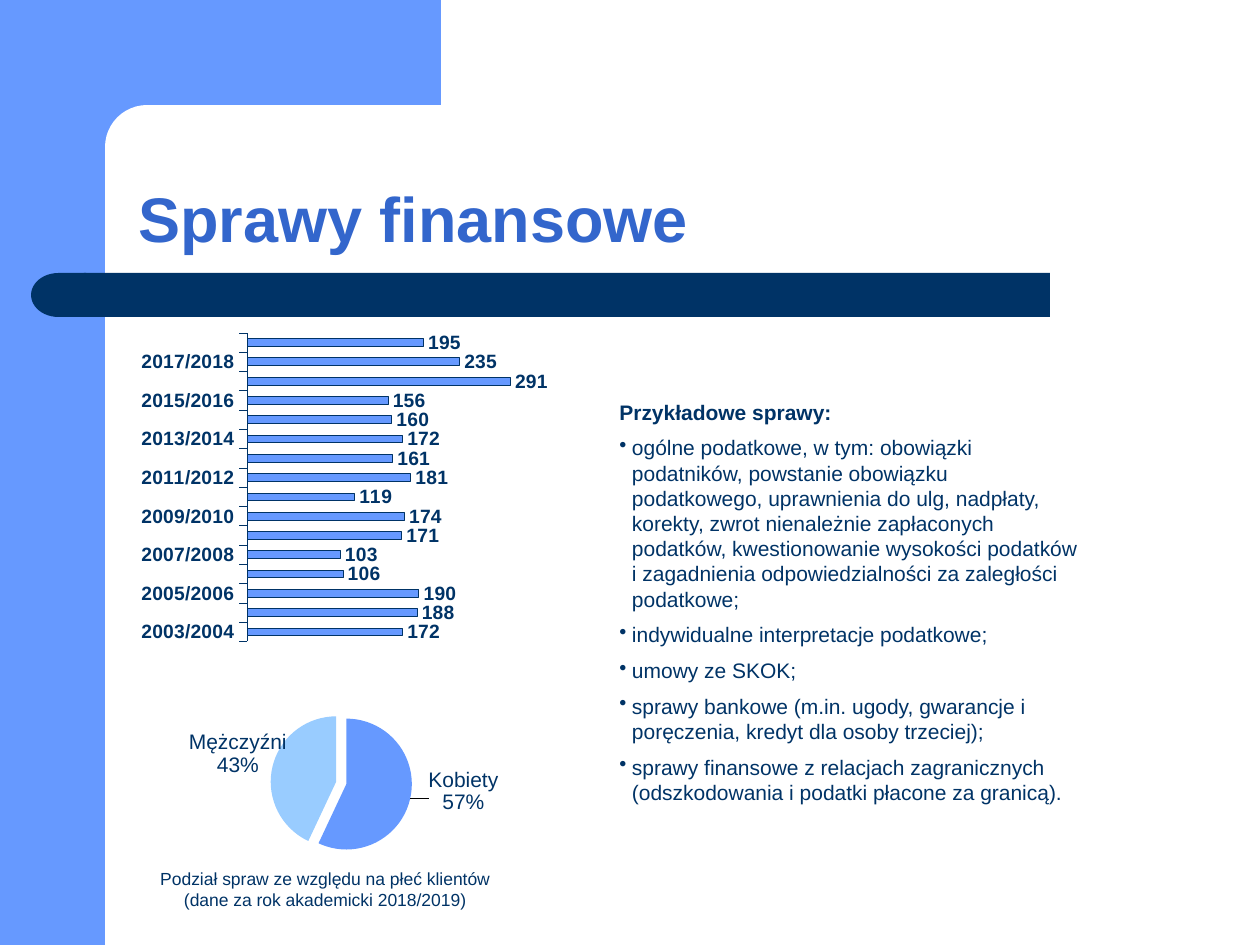
import pptx
import pptx.chart.data
import pptx.dml.color
import pptx.enum.chart
import pptx.enum.shapes
import pptx.enum.text
import pptx.oxml
import pptx.oxml.ns
import pptx.util

SCALE = 914400 // 126  # EMU per px
BLUE, LIGHT, NAVY, TITLE = "6699FF", "99CCFF", "003366", "3366CC"
SHAPES = pptx.enum.shapes.MSO_SHAPE
ALIGN = pptx.enum.text.PP_ALIGN
ANCHOR = pptx.enum.text.MSO_ANCHOR
CHARTS = pptx.enum.chart.XL_CHART_TYPE
LABELS = pptx.enum.chart.XL_LABEL_POSITION


def px(*lengths):
    return [pptx.util.Emu(length * SCALE) for length in lengths]


def color(value):
    return pptx.dml.color.RGBColor.from_string(value)


def manual_layout(inner=False, **values):
    """Manual chart layout; x, y, w, h are fractions of the chart."""
    parts = ['<c:layoutTarget val="inner"/>'] if inner else []
    if inner:
        parts += ['<c:xMode val="edge"/>', '<c:yMode val="edge"/>']
    parts += [f'<c:{name} val="{value}"/>' for name, value in values.items()]
    return pptx.oxml.parse_xml(
        f'<c:layout {pptx.oxml.ns.nsdecls("c")}><c:manualLayout>'
        f'{"".join(parts)}</c:manualLayout></c:layout>')


class SlideBuilder:
    font = "Arial"

    def __init__(self, slide):
        self.slide = slide

    def style(self, font, size, ink=NAVY, bold=False):
        font.name, font.size, font.bold = self.font, pptx.util.Pt(size), bold
        font.color.rgb = color(ink)

    def block(self, kind, box, fill, rounding=None, rotation=0):
        shape = self.slide.shapes.add_shape(kind, *px(*box))
        shape.shadow.inherit = False
        shape.fill.solid()
        shape.fill.fore_color.rgb = color(fill)
        shape.line.fill.background()
        shape.rotation = rotation
        if rounding is not None:
            shape.adjustments[0] = rounding

    def text(self, box, anchor=ANCHOR.TOP):
        frame = self.slide.shapes.add_textbox(*px(*box)).text_frame
        frame.word_wrap = True
        frame.vertical_anchor = anchor
        return frame

    def paragraph(self, frame, words, size, ink=NAVY, bold=False, before=0,
                  align=ALIGN.LEFT, bullet=False):
        paragraph = frame.paragraphs[0]
        if paragraph.runs:
            paragraph = frame.add_paragraph()
        paragraph.alignment = align
        paragraph.space_before = pptx.util.Pt(before)
        run = paragraph.add_run()
        run.text = words
        self.style(run.font, size, ink, bold)
        if bullet:
            properties = paragraph._p.get_or_add_pPr()
            properties.set("marL", "91440")
            properties.set("indent", "-91440")
            properties.append(pptx.oxml.parse_xml(
                f'<a:buChar {pptx.oxml.ns.nsdecls("a")} char="•"/>'))
        return paragraph

    def chart(self, kind, box, categories, values, plot, size, bold=False):
        data = pptx.chart.data.CategoryChartData()
        data.categories = categories
        data.add_series("Series 1", values)
        chart = self.slide.shapes.add_chart(kind, *px(*box), data).chart
        chart.has_title = chart.has_legend = False
        self.style(chart.font, size, bold=bold)
        area = chart._chartSpace.chart.plotArea
        for layout in area.findall(pptx.oxml.ns.qn("c:layout")):
            area.remove(layout)
        area.insert(0, manual_layout(inner=True, **plot))
        plot_object = chart.plots[0]
        plot_object.has_data_labels = True
        labels = plot_object.data_labels
        self.style(labels.font, size, bold=bold)
        labels.position = LABELS.OUTSIDE_END
        return chart

    def bars(self, box, categories, values, plot, maximum):
        chart = self.chart(CHARTS.BAR_CLUSTERED, box, categories, values,
                           plot, 11, bold=True)
        bar_plot = chart.plots[0]
        bar_plot.gap_width = 150
        bar_plot.vary_by_categories = False
        bar_plot.data_labels.show_value = True
        series = bar_plot.series[0]
        series.format.fill.solid()
        series.format.fill.fore_color.rgb = color(BLUE)
        axis = chart.category_axis
        axis.major_tick_mark = pptx.enum.chart.XL_TICK_MARK.OUTSIDE
        self.style(axis.tick_labels.font, 11, bold=True)
        for line, width in ((series.format.line, 0.25),
                            (axis.format.line, 0.15)):
            line.color.rgb = color(NAVY)
            line.width = pptx.util.Pt(width)
        scale = chart.value_axis
        scale.minimum_scale, scale.maximum_scale = 0, maximum
        scale.has_major_gridlines = False
        scale.visible = False

    def pie(self, box, categories, values, plot, fills, offsets):
        chart = self.chart(CHARTS.PIE_EXPLODED, box, categories, values,
                           plot, 12)
        pie_plot = chart.plots[0]
        series = pie_plot.series[0]
        explosion = series._element.find(pptx.oxml.ns.qn("c:explosion"))
        explosion.set("val", "8")
        for labels in (pie_plot.data_labels, series.data_labels):
            self.style(labels.font, 12)
            labels.show_percentage = labels.show_category_name = True
            labels.show_value = False
            labels.position = LABELS.OUTSIDE_END
        for index, (fill, (x, y)) in enumerate(zip(fills, offsets)):
            point = series.points[index]
            point.format.fill.solid()
            point.format.fill.fore_color.rgb = color(fill)
            point.data_label.position = LABELS.OUTSIDE_END
            label = series.data_labels._element.dLbl_lst[index]
            label.insert(1, manual_layout(x=x, y=y))
            for name, shown in (("showVal", 0), ("showCatName", 1),
                                ("showPercent", 1)):
                label.find(pptx.oxml.ns.qn(f"c:{name}")).set("val", str(shown))
            separator = pptx.oxml.parse_xml(
                f'<c:separator {pptx.oxml.ns.nsdecls("c")}>\n</c:separator>')
            label.append(separator)


def main():
    presentation = pptx.Presentation()
    presentation.slide_width, presentation.slide_height = px(1260, 945)
    builder = SlideBuilder(
        presentation.slides.add_slide(presentation.slide_layouts[6]))

    # Frame and title bar
    builder.block(SHAPES.RECTANGLE, (0, 0, 105, 945), BLUE)
    builder.block(SHAPES.RECTANGLE, (94, 0, 347, 147), BLUE)
    builder.block(SHAPES.ROUNDED_RECTANGLE, (105, 105, 703, 84), "FFFFFF", 0.5)
    builder.block(SHAPES.ROUNDED_RECTANGLE, (84, 273, 966, 44), NAVY, 0)
    builder.block(SHAPES.FLOWCHART_DELAY, (31, 273, 55, 44), NAVY, rotation=180)

    # Title
    title = builder.text((126, 105, 1102, 157), ANCHOR.BOTTOM)
    builder.paragraph(title, "Sprawy finansowe", 36, TITLE,
                      bold=True).line_spacing = 0.9

    # Example cases
    cases = builder.text((607, 393, 489, 432))
    builder.paragraph(cases, "Przykładowe sprawy:", 12, bold=True, before=6)
    for words in (
        "ogólne podatkowe, w tym: obowiązki podatników, powstanie obowiązku "
        "podatkowego, uprawnienia do ulg, nadpłaty, korekty, zwrot nienależnie "
        "zapłaconych podatków, kwestionowanie wysokości podatków i zagadnienia "
        "odpowiedzialności za zaległości podatkowe;",
        "indywidualne interpretacje podatkowe;",
        "umowy ze SKOK;",
        "sprawy bankowe (m.in. ugody, gwarancje i poręczenia, kredyt dla osoby "
        "trzeciej);",
        "sprawy finansowe z relacjach zagranicznych (odszkodowania i podatki "
        "płacone za granicą).",
    ):
        builder.paragraph(cases, words, 12, before=6, bullet=True)

    # Cases per academic year
    counts = [172, 188, 190, 106, 103, 171, 174, 119,
              181, 161, 172, 160, 156, 291, 235, 195]
    years = [f"{year}/{year + 1}" for year in range(2003, 2003 + len(counts))]
    builder.bars((94, 304, 546, 359), years, counts,
                 dict(x=0.28, y=0.08, w=0.58, h=0.86), 350)

    # Split by sex
    builder.pie((52, 679, 546, 208), ["Kobiety", "Mężczyźni"], [57, 43],
                dict(x=0.4, y=0.16, w=0.26, h=0.68), [BLUE, LIGHT],
                [(0.02, -0.15), (0.04, 0.05)])
    caption = builder.text((134, 862, 382, 54))
    builder.paragraph(caption, "Podział spraw ze względu na płeć klientów "
                      "(dane za rok akademicki 2018/2019)", 10, before=5,
                      align=ALIGN.CENTER)

    presentation.save("out.pptx")


if __name__ == "__main__":
    main()
